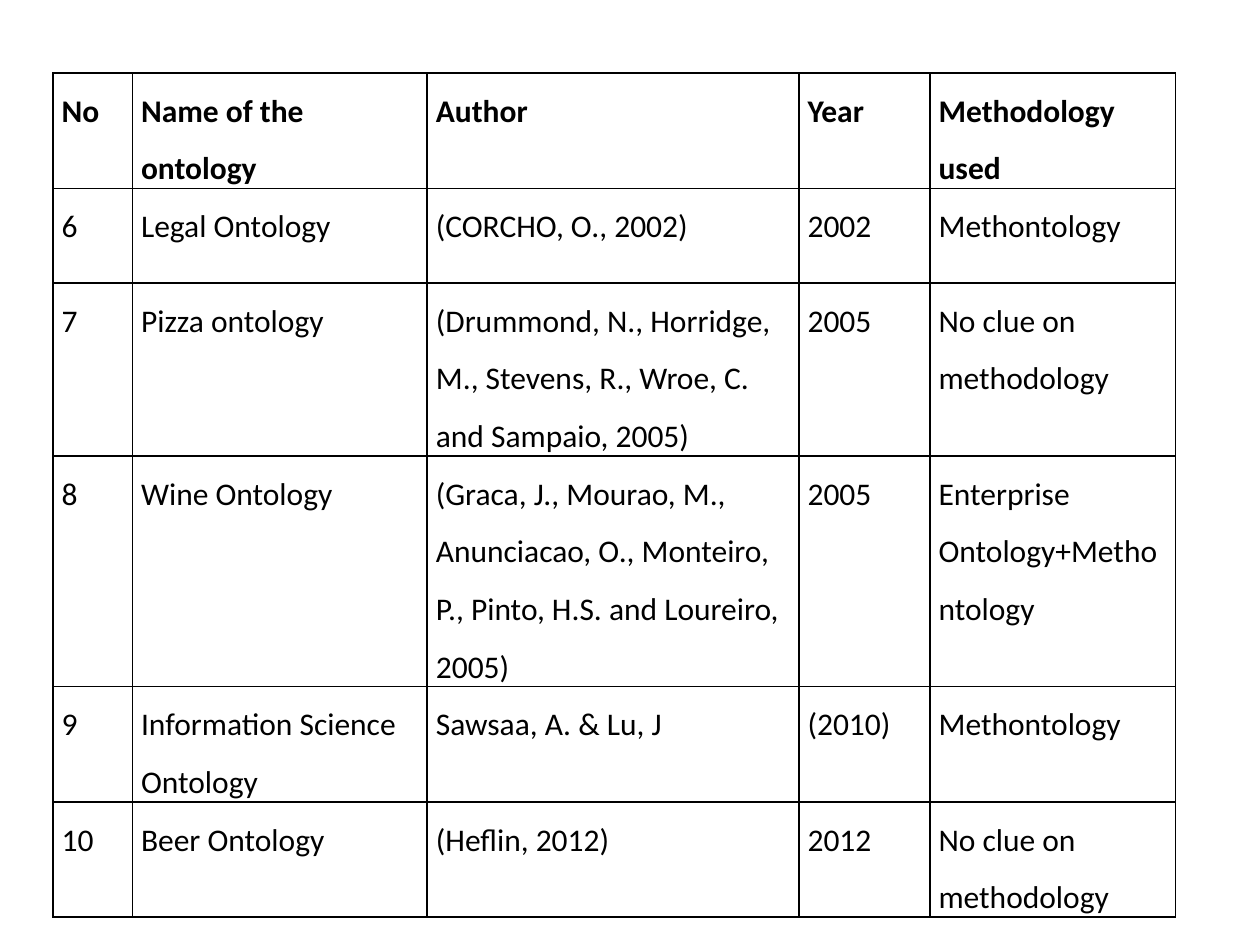
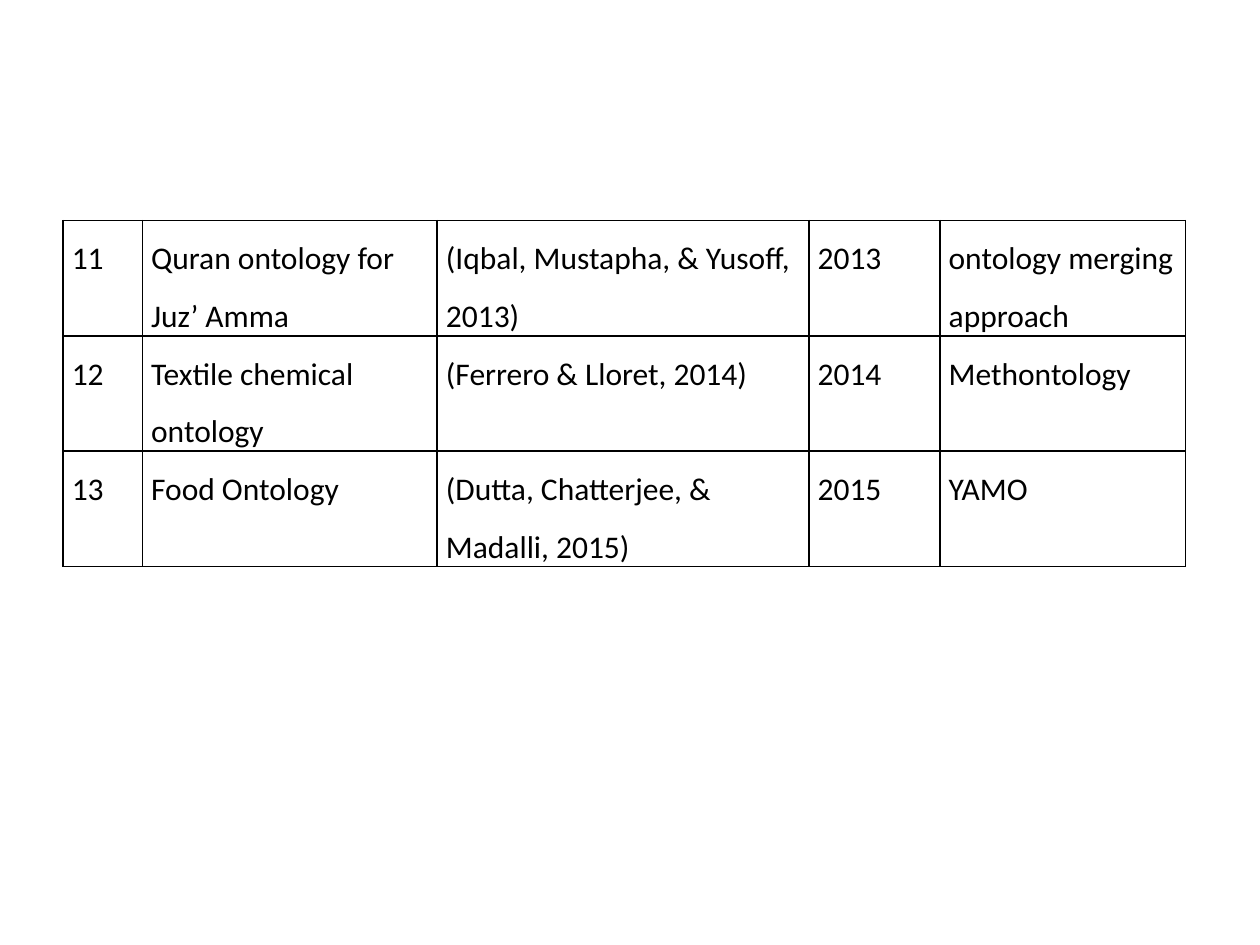
import pptx
import pptx.dml.color
import pptx.oxml.ns
import pptx.util
from lxml import etree

Inches = pptx.util.Inches
Pt = pptx.util.Pt

BLACK = "000000"
FONT_NAME = "Calibri"
FONT_SIZE = 18
BORDER_WIDTH = 1
COLUMN_WIDTHS = [0.63, 2.34, 2.95, 1.04, 1.95]
BLANK_LAYOUT = 6

HEADINGS = ("No", "Name of the ontology", "Author", "Year", "Methodology used")
ONTOLOGIES_TO_2012 = [
    ("6", "Legal Ontology", "(CORCHO, O., 2002)", "2002", "Methontology"),
    ("7", "Pizza ontology",
     "(Drummond, N., Horridge, M., Stevens, R., Wroe, C. and Sampaio, 2005)",
     "2005", "No clue on methodology"),
    ("8", "Wine Ontology",
     "(Graca, J., Mourao, M., Anunciacao, O., Monteiro, P., Pinto, H.S. and Loureiro, 2005)",
     "2005", "Enterprise Ontology+Methontology"),
    ("9", "Information Science Ontology", "Sawsaa, A. & Lu, J", "(2010)", "Methontology"),
    ("10", "Beer Ontology", "(Heflin, 2012)", "2012", "No clue on methodology"),
]
ONTOLOGIES_FROM_2013 = [
    ("11", "Quran ontology for Juz’ Amma", "(Iqbal, Mustapha, & Yusoff, 2013)",
     "2013", "ontology merging approach"),
    ("12", "Textile chemical ontology", "(Ferrero & Lloret, 2014)", "2014", "Methontology"),
    ("13", "Food Ontology", "(Dutta, Chatterjee, & Madalli, 2015)", "2015", "YAMO"),
]


def color(hex_value):
    return pptx.dml.color.RGBColor.from_string(hex_value)


def add_borders(cell):
    properties = cell._tc.get_or_add_tcPr()
    qn = pptx.oxml.ns.qn
    for side in ("lnL", "lnR", "lnT", "lnB"):
        line = etree.SubElement(properties, qn(f"a:{side}"), w=str(Pt(BORDER_WIDTH)))
        fill = etree.SubElement(line, qn("a:solidFill"))
        etree.SubElement(fill, qn("a:srgbClr"), val=BLACK)


def fill_cell(cell, text, bold):
    cell.margin_left = cell.margin_right = Inches(0.07)
    cell.margin_top = cell.margin_bottom = 0
    add_borders(cell)
    cell.fill.background()
    paragraph = cell.text_frame.paragraphs[0]
    paragraph.line_spacing = 1.5
    run = paragraph.add_run()
    run.text = text
    run.font.name = FONT_NAME
    run.font.size = Pt(FONT_SIZE)
    run.font.bold = bold
    run.font.color.rgb = color(BLACK)


def add_ontology_slide(presentation, box, records, row_heights, headings=None):
    """Add a slide with one table in box (left, top, width, height); rows grow with their text."""
    slide = presentation.slides.add_slide(presentation.slide_layouts[BLANK_LAYOUT])
    rows = ([headings] if headings else []) + records
    frame = slide.shapes.add_table(len(rows), len(COLUMN_WIDTHS), *map(Inches, box))
    table = frame.table
    table.first_row = bool(headings)
    table.horz_banding = False
    for column, width in zip(table.columns, COLUMN_WIDTHS):
        column.width = Inches(width)
    for row, height, texts in zip(table.rows, row_heights, rows):
        row.height = Inches(height)
        for cell, text in zip(row.cells, texts):
            fill_cell(cell, text, bold=texts is headings)


def main():
    presentation = pptx.Presentation()
    presentation.slide_width = Inches(10)
    presentation.slide_height = Inches(7.5)
    add_ontology_slide(presentation, (0.42, 0.58, 8.92, 6.6), ONTOLOGIES_TO_2012,
                       [0.75] * 4 + [0.42] * 2, HEADINGS)
    add_ontology_slide(presentation, (0.5, 1.75, 8.92, 2.7), ONTOLOGIES_FROM_2013,
                       [0.42] * 3)
    presentation.save("out.pptx")


if __name__ == "__main__":
    main()
